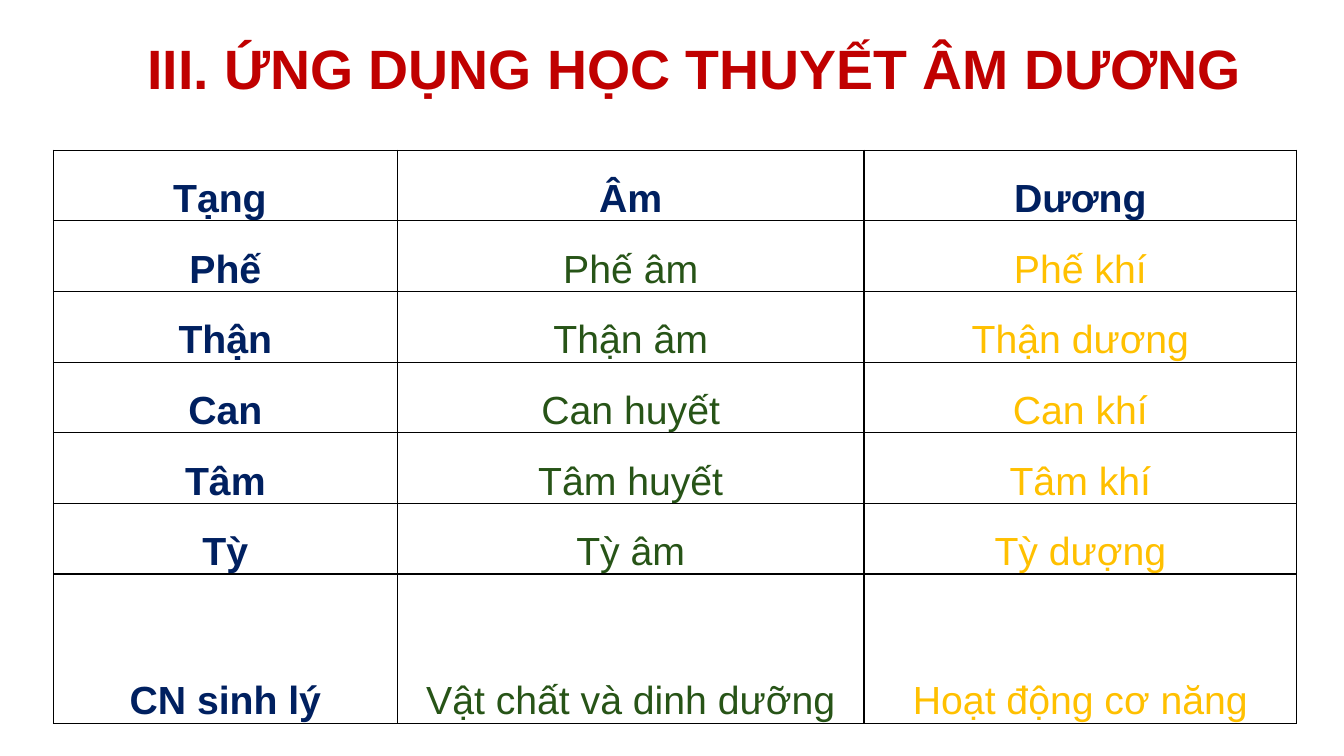
"""Build the slide on applying the yin-yang theory to the organs."""
from typing import NamedTuple

from lxml.etree import SubElement
from pptx import Presentation
from pptx.dml.color import RGBColor
from pptx.enum.text import MSO_ANCHOR as Anchor, PP_ALIGN as Align
from pptx.oxml.ns import qn
from pptx.slide import Slide
from pptx.table import _Cell as Cell
from pptx.text.text import _Paragraph as Paragraph
from pptx.util import Inches, Pt

RED = RGBColor(0xC0, 0x00, 0x00)
NAVY = RGBColor(0x00, 0x20, 0x60)
GREEN = RGBColor(0x27, 0x54, 0x17)
GOLD = RGBColor(0xFF, 0xC0, 0x00)
WHITE = RGBColor(0xFF, 0xFF, 0xFF)
BLACK = RGBColor(0x00, 0x00, 0x00)


class TextStyle(NamedTuple):
    size: float
    color: RGBColor
    bold: bool
    line_spacing: float


class Column(NamedTuple):
    width: float
    style: TextStyle


class Organ(NamedTuple):
    name: str
    yin: str
    yang: str
    height: float = 0.66


TITLE = TextStyle(39.6, RED, True, 0.9)
HEADING = TextStyle(28, NAVY, True, 1.5)
COLUMNS = [
    Column(3.41, HEADING),
    Column(4.63, TextStyle(28, GREEN, False, 1.5)),
    Column(4.29, TextStyle(28, GOLD, False, 1.5)),
]
ORGANS = [
    Organ("Tạng ", "Âm", "Dương"),
    Organ("Phế", "Phế âm", "Phế khí"),
    Organ("Thận", "Thận âm", "Thận dương"),
    Organ("Can", "Can huyết", "Can khí"),
    Organ("Tâm", "Tâm huyết", "Tâm khí"),
    Organ("Tỳ", "Tỳ âm", "Tỳ dượng"),
    Organ("CN sinh lý", "Vật chất và dinh dưỡng", "Hoạt động cơ năng", 1.48),
]


def write(paragraph: Paragraph, text: str, style: TextStyle) -> None:
    paragraph.text = text
    paragraph.alignment = Align.CENTER
    paragraph.line_spacing = style.line_spacing
    paragraph.font.name = "Arial"
    paragraph.font.size = Pt(style.size)
    paragraph.font.bold = style.bold
    paragraph.font.color.rgb = style.color


def add_borders(cell: Cell) -> None:
    properties = cell._tc.get_or_add_tcPr()
    for side in ("lnL", "lnR", "lnT", "lnB"):
        line = SubElement(properties, qn(f"a:{side}"), w=str(Pt(1)))
        fill = SubElement(line, qn("a:solidFill"))
        SubElement(fill, qn("a:srgbClr"), val=str(BLACK))


def fill_cell(cell: Cell, text: str, style: TextStyle) -> None:
    add_borders(cell)
    cell.fill.solid()
    cell.fill.fore_color.rgb = WHITE
    cell.vertical_anchor = Anchor.BOTTOM
    cell.margin_left = cell.margin_right = Inches(0.07)
    cell.margin_top = cell.margin_bottom = 0
    write(cell.text_frame.paragraphs[0], text, style)


def add_title(slide: Slide, text: str) -> None:
    box = slide.shapes.add_textbox(Inches(0.92), Inches(0.12), Inches(11.94), Inches(1.17))
    box.text_frame.word_wrap = True
    box.text_frame.vertical_anchor = Anchor.MIDDLE
    write(box.text_frame.paragraphs[0], text, TITLE)


def add_organ_table(slide: Slide) -> None:
    width = sum(column.width for column in COLUMNS)
    height = sum(organ.height for organ in ORGANS)
    table = slide.shapes.add_table(
        len(ORGANS), len(COLUMNS), Inches(0.53), Inches(1.49), Inches(width), Inches(height)
    ).table
    table.horz_banding = False
    for index, column in enumerate(COLUMNS):
        table.columns[index].width = Inches(column.width)
    for row, organ in enumerate(ORGANS):
        table.rows[row].height = Inches(organ.height)
        texts = (organ.name, organ.yin, organ.yang)
        for index, (text, column) in enumerate(zip(texts, COLUMNS)):
            style = HEADING if row == 0 else column.style
            fill_cell(table.cell(row, index), text, style)


def main() -> None:
    presentation = Presentation()
    presentation.slide_width = Inches(13.33)
    presentation.slide_height = Inches(7.5)
    slide = presentation.slides.add_slide(presentation.slide_layouts[6])
    add_title(slide, "III. ỨNG DỤNG HỌC THUYẾT ÂM DƯƠNG")
    add_organ_table(slide)
    presentation.save("out.pptx")


if __name__ == "__main__":
    main()
